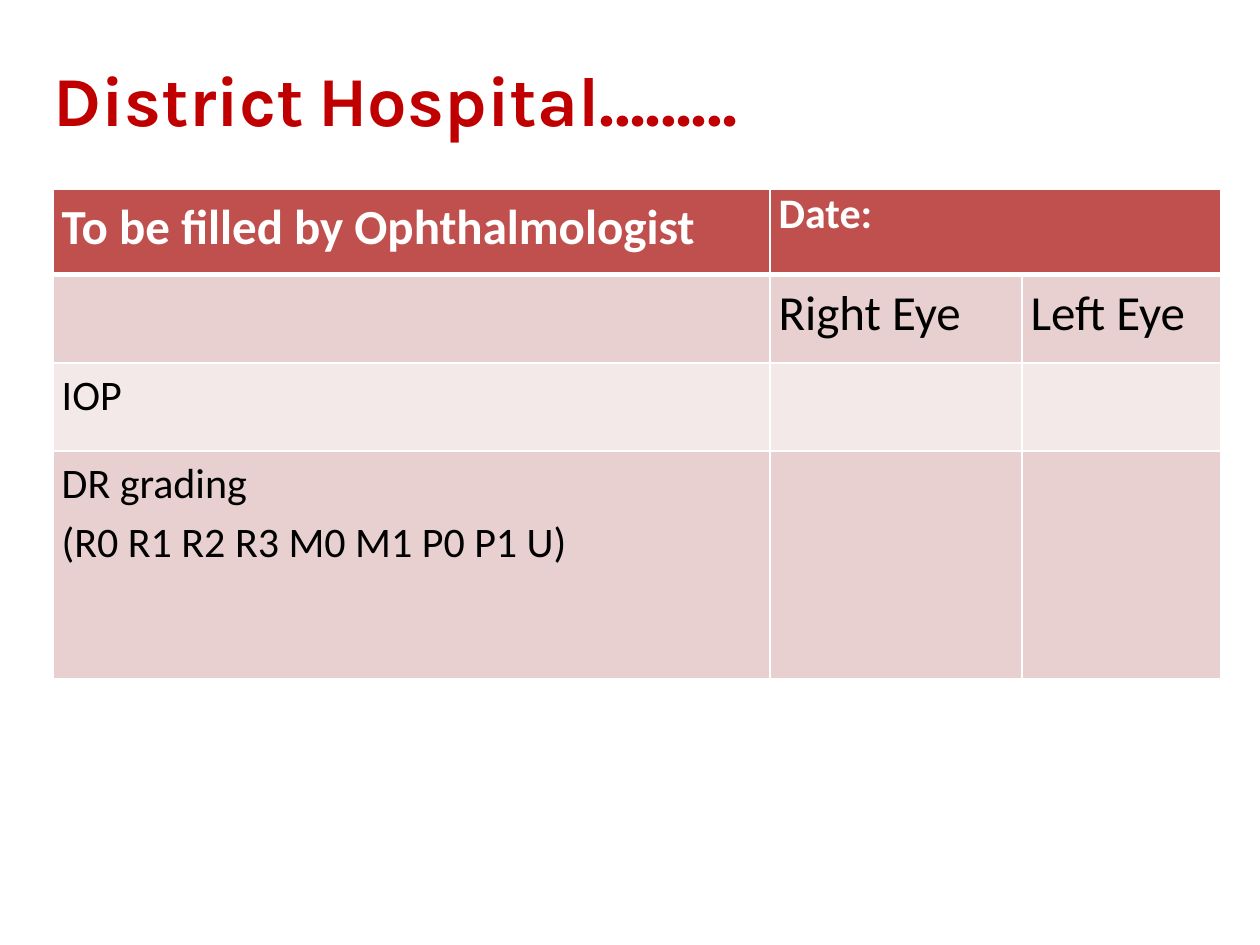
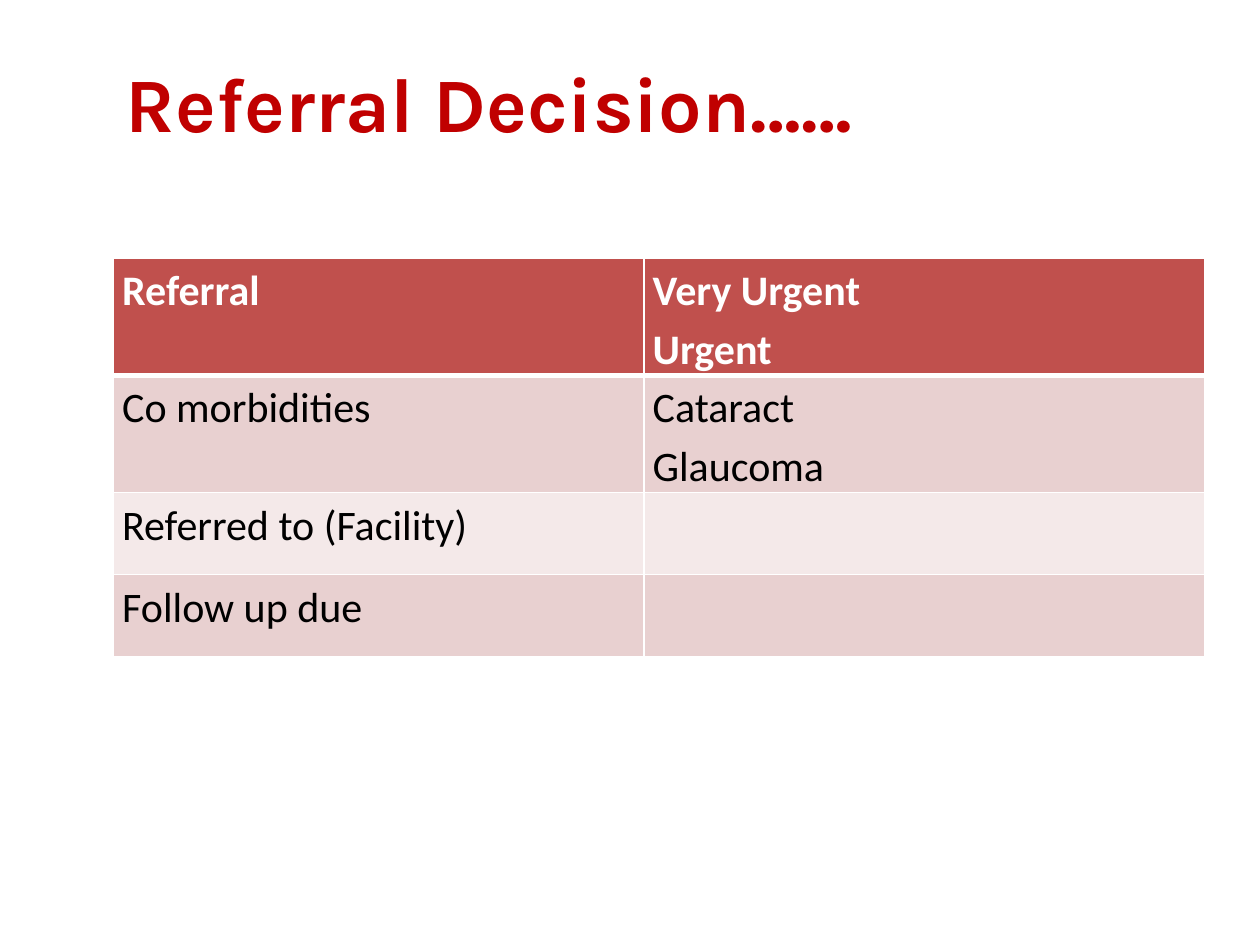
from dataclasses import dataclass
from lxml.etree import SubElement
from pptx import Presentation
from pptx.dml.color import RGBColor
from pptx.enum.text import MSO_ANCHOR
from pptx.oxml.ns import qn
from pptx.util import Inches, Pt


@dataclass(frozen=True)
class Theme:
    title_color: str = "C00000"
    header: str = "C0504D"
    band_dark: str = "E8D0D0"
    band_light: str = "F4E9E9"
    white: str = "FFFFFF"
    black: str = "000000"
    title_font: str = "Karla"
    body_font: str = "Calibri"
    body: int = 24
    large: int = 28
    line_spacing: float = 1.15


theme = Theme()


def style_run(r, font, size, color, bold):
    r.font.name = font
    r.font.size = Pt(size)
    r.font.bold = bold
    r.font.color.rgb = RGBColor.from_string(color)


def add_border(cell, side, width):
    ln = SubElement(cell._tc.get_or_add_tcPr(), qn(f"a:ln{side}"), w=str(Pt(width)))
    fill = SubElement(ln, qn("a:solidFill"))
    SubElement(fill, qn("a:srgbClr"), val=theme.white)


slides = [
    {
        "title": ["District", " ", "Hospital………"],
        "title_size": 40,
        "title_box": (0.33, 0.33, 8.82, 0.91),
        "table_at": (0.42, 1.5),
        "cols": [5.69, 2, 1.58],
        "heights": [0.68, 0.7, 0.7, 1.81],
        "rows": [
            ["To be filled by Ophthalmologist", "Date:", ""],
            ["", "Right Eye", "Left Eye"],
            ["IOP", "", ""],
            ["DR grading\n(R0 R1 R2 R3 M0 M1 P0 P1 U)", "", ""],
        ],
        "large": ["To be filled by Ophthalmologist", "Right Eye", "Left Eye"],
    },
    {
        "title": ["Referral Decision……"],
        "title_size": 44,
        "title_box": (0.9, 0.31, 8.25, 0.99),
        "table_at": (0.9, 2.05),
        "cols": [4.21, 4.45],
        "heights": [0.93, 0.93, 0.65, 0.65],
        "rows": [
            ["Referral", "Very Urgent\nUrgent"],
            ["Co morbidities", "Cataract\nGlaucoma"],
            ["Referred to (Facility)", ""],
            ["Follow up due", ""],
        ],
        "large": [],
    },
]

prs = Presentation()
prs.slide_width = Inches(10)
prs.slide_height = Inches(7.5)

for page in slides:
    s = prs.slides.add_slide(prs.slide_layouts[6])
    sp = s.shapes.add_textbox(*map(Inches, page["title_box"]))
    tf = sp.text_frame
    tf.word_wrap = True
    tf.vertical_anchor = MSO_ANCHOR.MIDDLE
    for text in page["title"]:
        r = tf.paragraphs[0].add_run()
        r.text = text
        if text == " ":
            style_run(r, theme.body_font, 36, theme.black, True)
        else:
            style_run(r, theme.title_font, page["title_size"], theme.title_color, True)

    size = sum(page["cols"]), sum(page["heights"])
    table = s.shapes.add_table(len(page["rows"]), len(page["cols"]),
                               *map(Inches, page["table_at"] + size)).table
    for col, width in zip(table.columns, page["cols"]):
        col.width = Inches(width)

    for i, texts in enumerate(page["rows"]):
        table.rows[i].height = Inches(page["heights"][i])
        band = theme.header if i == 0 else theme.band_dark if i % 2 else theme.band_light
        for j, text in enumerate(texts):
            cell = table.cell(i, j)
            cell.margin_left = cell.margin_right = Inches(0.07)
            cell.margin_top = cell.margin_bottom = 0
            for side, width in (("L", 1), ("R", 1), ("T", 3 if i == 1 else 1), ("B", 3 if i == 0 else 1)):
                add_border(cell, side, width)
            cell.fill.solid()
            cell.fill.fore_color.rgb = RGBColor.from_string(band)
            cell.text_frame.text = text
            for p in cell.text_frame.paragraphs:
                p.line_spacing = 1.0 if text == "Date:" else theme.line_spacing
                for r in p.runs:
                    style_run(r, theme.body_font,
                              theme.large if text in page["large"] else theme.body,
                              theme.white if i == 0 else theme.black, i == 0)

    if len(page["cols"]) == 3:
        table.cell(0, 1).merge(table.cell(0, 2))

prs.save("out.pptx")
